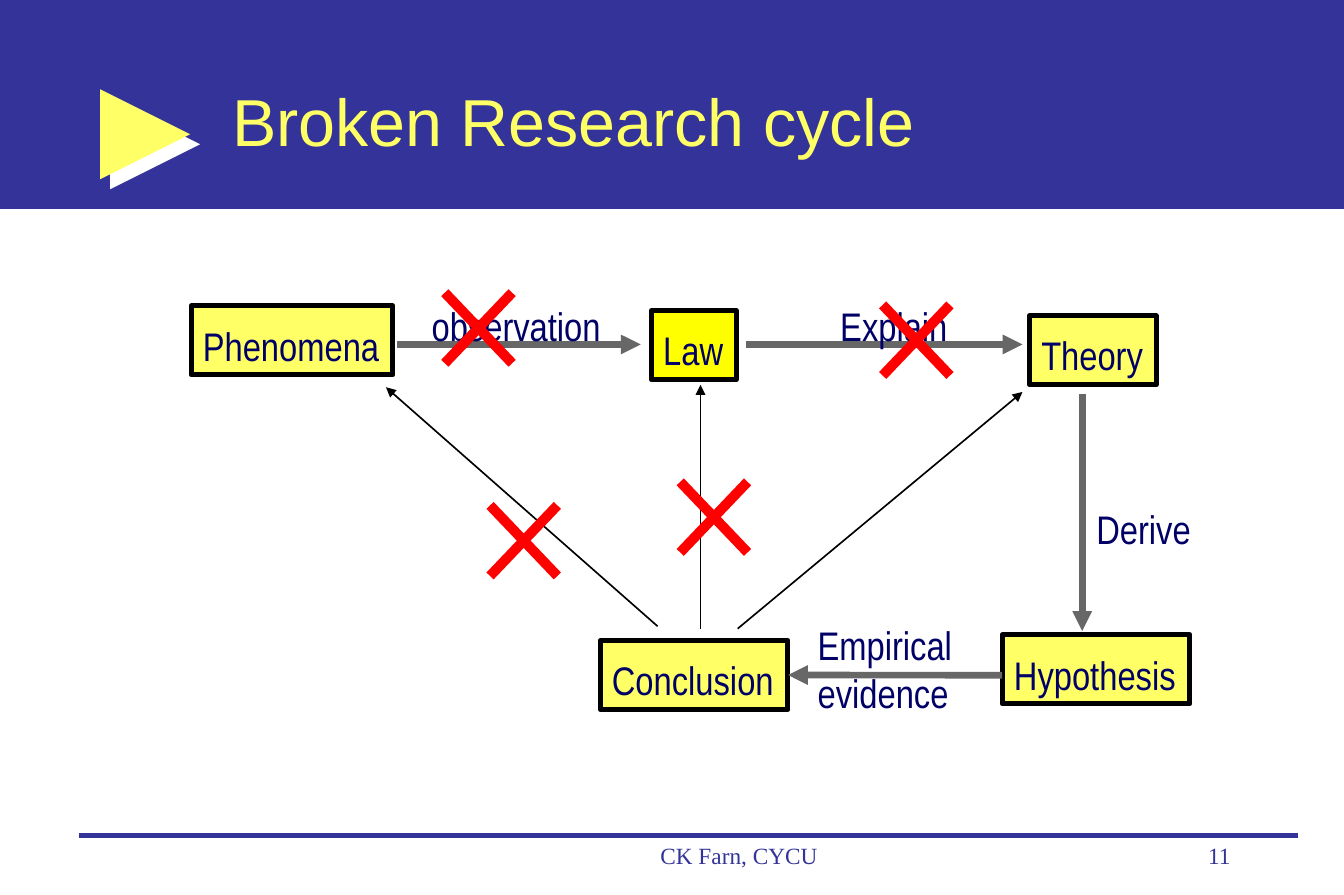
from typing import NamedTuple, Optional

from lxml import etree
from pptx import Presentation
from pptx.dml.color import RGBColor
from pptx.enum import shapes, text
from pptx.oxml import ns
from pptx.util import Cm, Pt

HUES = {
    "navy": "333399", "ink": "000066", "pale": "FFFF66", "gold": "FFFF00",
    "gray": "676767", "black": "000000", "red": "FF0000", "white": "FFFFFF",
}
NARROW, SERIF = "Arial Narrow", "Times New Roman"
BOX_H, LABEL_H = 1.47, 1.57
CROSS_W, CROSS_H = 1.43, 1.5


class Box(NamedTuple):
    name: str
    x: float
    y: float
    w: float
    fill: str = "pale"


class Label(NamedTuple):
    words: str
    x: float
    y: float
    w: float
    h: float = LABEL_H
    gap: float = 1.3
    size: int = 24
    font: str = NARROW
    hue: str = "ink"
    align: text.PP_ALIGN = text.PP_ALIGN.LEFT
    wrap: bool = False


class Arrow(NamedTuple):
    x1: float
    y1: float
    x2: float
    y2: float
    hue: str = "gray"
    width: float = 4
    goal: Optional[str] = None  # box whose right side it meets


BOXES = [
    Box("Phenomena", 4.06, 6.5, 4.29),
    Box("Law", 13.84, 6.6, 1.8, "gold"),
    Box("Theory", 21.87, 6.71, 2.69),
    Box("Hypothesis", 21.29, 13.49, 3.99),
    Box("Conclusion", 12.75, 13.61, 3.99),
]
ARROWS = [
    Arrow(8.43, 7.32, 13.61, 7.32),
    Arrow(15.85, 7.32, 21.72, 7.32),
    Arrow(22.99, 8.38, 22.99, 13.41),
    Arrow(21.29, 14.35, 16.74, 14.35, goal="Conclusion"),
    Arrow(15.67, 13.36, 21.72, 8.33, "black", 1),
    Arrow(14.88, 13.36, 14.88, 8.18, "black", 1),
    Arrow(13.97, 13.31, 8.2, 8.23, "black", 1),
]
LABELS = [
    Label("observation", 8.92, 5.99, 4.14),
    Label("Explain", 17.6, 5.99, 2.82),
    Label("Derive", 23.04, 10.29, 2.54),
    Label("Empirical\nevidence", 17.12, 13.06, 3.4, 2.31, 1),
    Label("CK Farn, CYCU", 11.18, 17.75, 9.04, 1.27, 1, 14, SERIF, "navy",
          text.PP_ALIGN.CENTER, True),
    Label("11", 20.45, 17.75, 5.94, 1.27, 1, 14, SERIF, "navy",
          text.PP_ALIGN.RIGHT, True),
]
CROSSES = [(10.41, 10.74), (9.45, 6.22), (14.45, 10.24), (18.75, 6.48)]


def rgb(hue: str) -> RGBColor:
    return RGBColor.from_string(HUES[hue])


def write(shape, item: Label) -> None:
    frame = shape.text_frame
    frame.text = item.words
    frame.word_wrap = item.wrap
    frame.vertical_anchor = text.MSO_ANCHOR.TOP
    for para in frame.paragraphs:
        para.alignment = item.align
        para.line_spacing = item.gap
        for run in para.runs:
            run.font.name = item.font
            run.font.size = Pt(item.size)
            run.font.color.rgb = rgb(item.hue)


def add_label(slide, item: Label):
    shape = slide.shapes.add_textbox(
        Cm(item.x), Cm(item.y), Cm(item.w), Cm(item.h))
    write(shape, item)
    return shape


def add_solid(slide, kind, x: float, y: float, w: float, h: float, fill: str):
    shape = slide.shapes.add_shape(kind, Cm(x), Cm(y), Cm(w), Cm(h))
    shape.shadow.inherit = False
    shape.fill.solid()
    shape.fill.fore_color.rgb = rgb(fill)
    shape.line.fill.background()
    return shape


def add_box(slide, item: Box):
    shape = add_solid(slide, shapes.MSO_SHAPE.RECTANGLE,
                      item.x, item.y, item.w, BOX_H, item.fill)
    shape.line.color.rgb = rgb("black")
    shape.line.width = Pt(3)
    write(shape, Label(item.name, item.x, item.y, item.w, BOX_H, 1.2))
    return shape


def add_line(slide, item: Arrow, head: bool = False):
    line = slide.shapes.add_connector(
        shapes.MSO_CONNECTOR.STRAIGHT,
        Cm(item.x1), Cm(item.y1), Cm(item.x2), Cm(item.y2))
    line.line.color.rgb = rgb(item.hue)
    line.line.width = Pt(item.width)
    if head:
        etree.SubElement(line.line._get_or_add_ln(), ns.qn("a:tailEnd"),
                         type="triangle")
    etree.SubElement(line._element.spPr, ns.qn("a:effectLst"))
    return line


def add_shade(shape, hue: str) -> None:
    fx = shape._element.spPr.find(ns.qn("a:effectLst"))
    shade = etree.SubElement(fx, ns.qn("a:outerShdw"), dist=str(Pt(8.5)),
                             dir="2700000", algn="ctr", rotWithShape="0")
    etree.SubElement(shade, ns.qn("a:srgbClr"), val=HUES[hue])


def main() -> None:
    deck = Presentation()
    deck.slide_width, deck.slide_height = Cm(28.55), Cm(19.02)
    slide = deck.slides.add_slide(deck.slide_layouts[6])

    # Banner, pointer and footer rule
    add_solid(slide, shapes.MSO_SHAPE.RECTANGLE, 0, 0, 28.55, 4.44, "navy")
    mark = add_solid(slide, shapes.MSO_SHAPE.RIGHT_ARROW,
                     2.13, 1.9, 1.91, 1.91, "pale")
    mark.adjustments[0], mark.adjustments[1] = 0.38, 1
    add_shade(mark, "white")
    add_line(slide, Arrow(1.68, 17.75, 27.58, 17.75, "navy", 3))

    # Title
    title = add_label(slide, Label("Broken Research cycle", 4.75, 1.65, 21.64,
                                   1.83, 1, 40, "Arial", "pale", wrap=True))
    frame = title.text_frame
    frame.vertical_anchor = text.MSO_ANCHOR.BOTTOM
    frame.margin_left = frame.margin_right = Cm(0.18)
    frame.margin_top = frame.margin_bottom = Cm(0.08)

    # Cycle
    nodes = {item.name: add_box(slide, item) for item in BOXES}
    for item in ARROWS:
        line = add_line(slide, item, head=True)
        if item.goal:
            line.end_connect(nodes[item.goal], 3)
    for item in LABELS:
        add_label(slide, item)

    # Crosses over the broken links
    for x, y in CROSSES:
        right, low = x + CROSS_W, y + CROSS_H
        add_line(slide, Arrow(x, y, right, low, "red", 6))
        add_line(slide, Arrow(right, y, x, low, "red", 6))

    deck.save("out.pptx")


if __name__ == "__main__":
    main()
